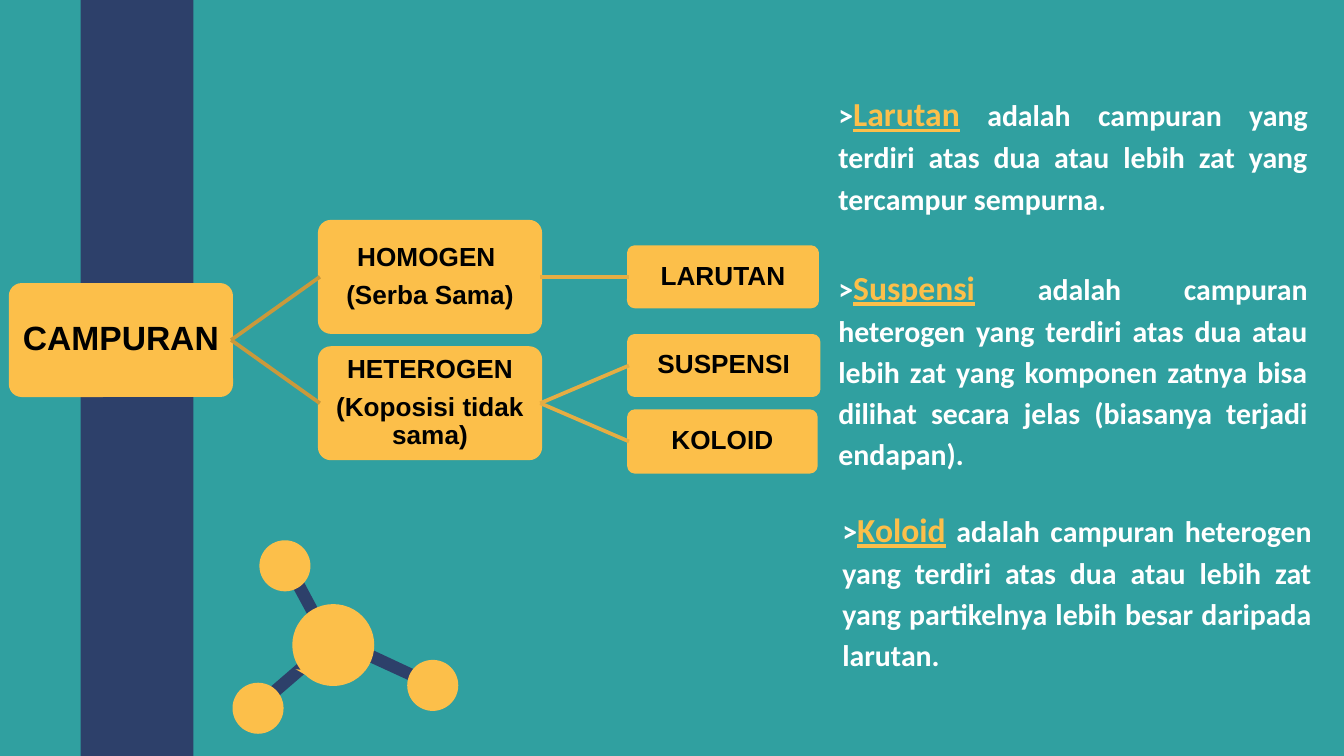
from dataclasses import dataclass

from lxml import etree
from pptx import Presentation
from pptx import util as u
from pptx.dml.color import RGBColor
from pptx.enum import shapes, text
from pptx.oxml.ns import qn

TEAL = RGBColor(0x30, 0xA0, 0xA0)
NAVY = RGBColor(0x2D, 0x40, 0x6A)
YELLOW = RGBColor(0xFC, 0xBF, 0x4A)
OCHRE = RGBColor(0xCA, 0x99, 0x3B)
AMBER = RGBColor(0xE5, 0xAD, 0x43)
WHITE = RGBColor(0xFF, 0xFF, 0xFF)
BLACK = RGBColor(0, 0, 0)

# 16:9 slide, in inches
SLIDE_WIDTH = 10
SLIDE_HEIGHT = SLIDE_WIDTH * 9 / 16


@dataclass
class Node:
    lines: list[str]
    left: float
    top: float
    width: float
    height: float
    size: int = 14
    parent: str = ""
    link_color: RGBColor = AMBER


@dataclass
class Definition:
    term: str
    meaning: str
    left: float
    top: float


@dataclass
class Atom:
    x: float
    y: float
    diameter: float


NODES = [
    Node(["CAMPURAN"], 0.08, 2.12, 1.64, 0.82, size=18),
    Node(["HOMOGEN ", "(Serba Sama)"], 2.38, 1.65, 1.64, 0.82,
         parent="CAMPURAN", link_color=OCHRE),
    Node(["HETEROGEN", "(Koposisi tidak sama)"], 2.38, 2.59, 1.64, 0.82,
         parent="CAMPURAN", link_color=OCHRE),
    Node(["LARUTAN"], 4.68, 1.84, 1.4, 0.44, parent="HOMOGEN "),
    Node(["SUSPENSI"], 4.68, 2.5, 1.41, 0.44, parent="HETEROGEN"),
    Node(["KOLOID"], 4.68, 3.06, 1.39, 0.45, parent="HETEROGEN"),
]

DEFINITIONS = [
    Definition("Larutan", " adalah campuran yang terdiri atas dua atau lebih zat "
               "yang tercampur sempurna.", 5.97, 0.55),
    Definition("Suspensi", " adalah campuran heterogen yang terdiri atas dua atau "
               "lebih zat yang komponen zatnya bisa dilihat secara jelas "
               "(biasanya terjadi endapan).", 5.97, 1.84),
    Definition("Koloid", " adalah campuran heterogen yang terdiri atas dua atau "
               "lebih zat yang partikelnya lebih besar daripada larutan.", 6, 3.64),
]

BONDS = [
    [(2.42, 4.76), (1.91, 5.2), (1.97, 5.27), (2.48, 4.83)],
    [(2.16, 4.14), (2.08, 4.19), (2.4, 4.78), (2.48, 4.74)],
    [(2.63, 4.77), (2.6, 4.86), (3.21, 5.14), (3.25, 5.06)],
]
ATOMS = [Atom(2.48, 4.8, 0.61), Atom(1.92, 5.27, 0.38),
         Atom(2.12, 4.21, 0.38), Atom(3.22, 5.1, 0.38)]
ATOM_TIP = [(2.2, 4.98), (2.3, 4.99), (2.27, 5.02)]


def paint(shape, color: RGBColor) -> None:
    shape.shadow.inherit = False
    shape.fill.solid()
    shape.fill.fore_color.rgb = color
    shape.line.fill.background()


def add_box(slide, kind, left: float, top: float, width: float, height: float,
            color: RGBColor):
    shape = slide.shapes.add_shape(kind, u.Inches(left), u.Inches(top),
                                   u.Inches(width), u.Inches(height))
    paint(shape, color)
    return shape


def add_polygon(slide, points: list[tuple[float, float]], color: RGBColor) -> None:
    corners = [(u.Inches(x), u.Inches(y)) for x, y in points]
    builder = slide.shapes.build_freeform(*corners[0])
    builder.add_line_segments(corners[1:], close=True)
    paint(builder.convert_to_shape(), color)


def add_run(paragraph, words: str, *, size: int, font: str, color: RGBColor,
            underline: bool = False) -> None:
    run = paragraph.add_run()
    run.text = words
    run.font.size = u.Pt(size)
    run.font.name = font
    run.font.bold = True
    run.font.underline = underline
    run.font.color.rgb = color


def set_frame(shape, inset: float, anchor):
    frame = shape.text_frame
    frame.word_wrap = True
    frame.vertical_anchor = anchor
    frame.margin_left = frame.margin_right = u.Inches(inset)
    frame.margin_top = frame.margin_bottom = u.Inches(inset)
    return frame


def add_node(slide, node: Node):
    shape = add_box(slide, shapes.MSO_SHAPE.ROUNDED_RECTANGLE, node.left, node.top,
                    node.width, node.height, YELLOW)
    shape.adjustments[0] = 0.1
    shape.line.color.rgb = YELLOW
    shape.line.width = u.Pt(2)
    frame = set_frame(shape, 0.01, text.MSO_ANCHOR.MIDDLE)
    for index, line in enumerate(node.lines):
        paragraph = frame.add_paragraph() if index else frame.paragraphs[0]
        paragraph.alignment = text.PP_ALIGN.CENTER
        paragraph.line_spacing = 0.9
        paragraph.space_after = u.Pt(0.35 * node.size)
        add_run(paragraph, line, size=node.size, font="Arial", color=BLACK)
    return shape


def add_link(slide, parent, child, color: RGBColor) -> None:
    link = slide.shapes.add_connector(shapes.MSO_CONNECTOR.STRAIGHT, 0, 0, 0, 0)
    link.begin_connect(parent, 3)
    link.end_connect(child, 1)
    link.line.color.rgb = color
    link.line.width = u.Pt(2)
    etree.SubElement(link._element.spPr, qn("a:effectLst"))


def add_definition(slide, definition: Definition) -> None:
    box = slide.shapes.add_textbox(u.Inches(definition.left), u.Inches(definition.top),
                                   u.Inches(3.86), u.Inches(0.75))
    paragraph = set_frame(box, 0.1, text.MSO_ANCHOR.TOP).paragraphs[0]
    paragraph.alignment = text.PP_ALIGN.JUSTIFY
    paragraph.line_spacing = 1.15
    properties = paragraph._p.get_or_add_pPr()
    properties.set("marL", str(u.Inches(0.17)))
    properties.set("indent", "0")
    add_run(paragraph, ">", size=16, font="Calibri", color=WHITE)
    add_run(paragraph, definition.term, size=18, font="Calibri", color=YELLOW,
            underline=True)
    add_run(paragraph, definition.meaning, size=16, font="Calibri", color=WHITE)


def main() -> None:
    presentation = Presentation()
    presentation.slide_width = u.Inches(SLIDE_WIDTH)
    presentation.slide_height = u.Inches(SLIDE_HEIGHT)
    slide = presentation.slides.add_slide(presentation.slide_layouts[6])

    # Background and side band
    slide.background.fill.solid()
    slide.background.fill.fore_color.rgb = TEAL
    add_box(slide, shapes.MSO_SHAPE.RECTANGLE, 0.6, 0, 0.84, SLIDE_HEIGHT, NAVY)

    # Molecule
    for bond in BONDS:
        add_polygon(slide, bond, NAVY)
    for atom in ATOMS:
        radius = atom.diameter / 2
        add_box(slide, shapes.MSO_SHAPE.OVAL, atom.x - radius, atom.y - radius,
                atom.diameter, atom.diameter, YELLOW)
    add_polygon(slide, ATOM_TIP, YELLOW)

    # Classification tree
    boxes = {}
    for node in NODES:
        boxes[node.lines[0]] = add_node(slide, node)
        if node.parent:
            add_link(slide, boxes[node.parent], boxes[node.lines[0]], node.link_color)

    # Definitions
    for definition in DEFINITIONS:
        add_definition(slide, definition)

    presentation.save("out.pptx")


if __name__ == "__main__":
    main()
